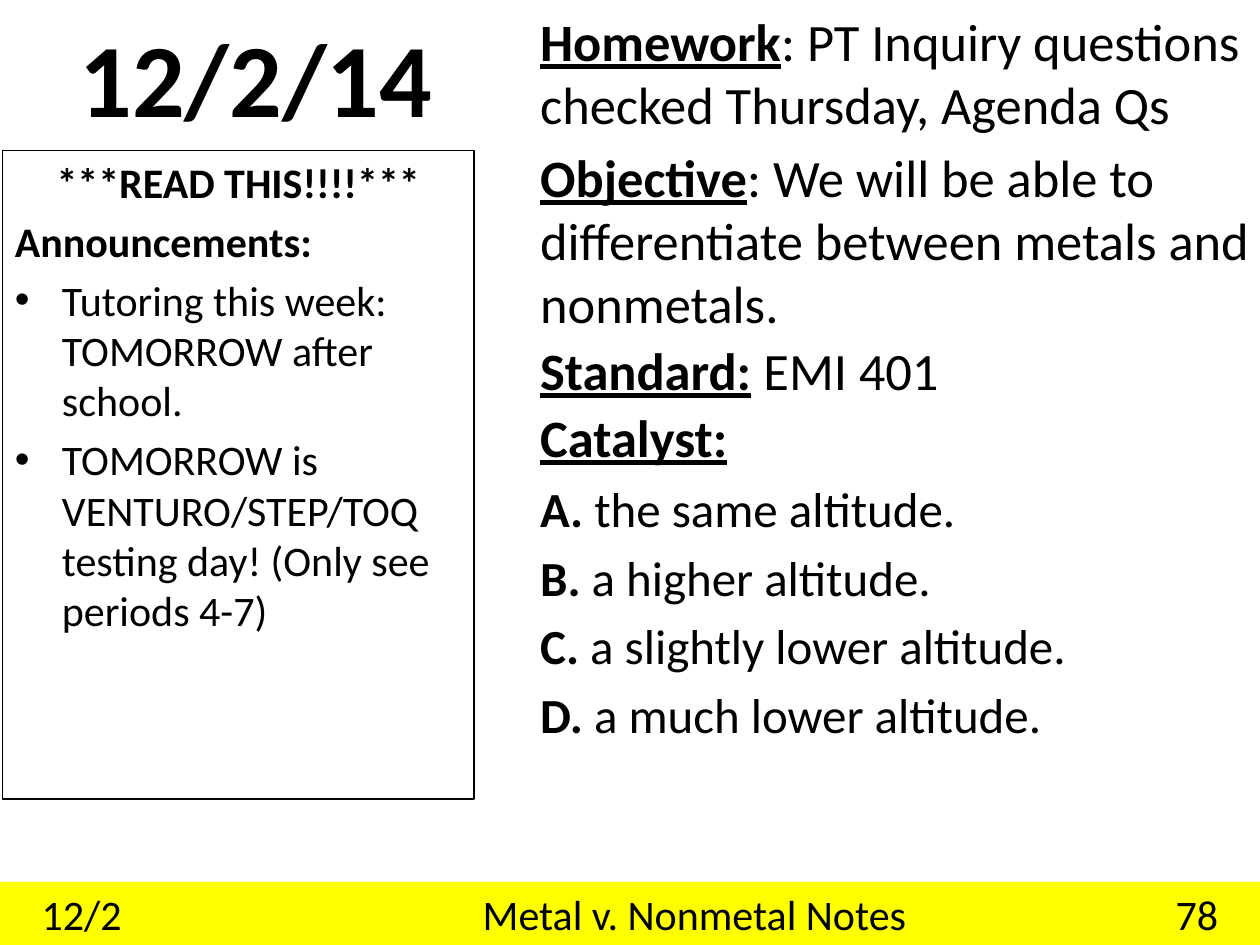
from dataclasses import dataclass

from lxml.etree import SubElement
from pptx import Presentation
from pptx.dml.color import RGBColor
from pptx.enum.shapes import MSO_SHAPE
from pptx.enum.text import MSO_ANCHOR, PP_ALIGN
from pptx.oxml.ns import qn
from pptx.util import Cm, Pt

BLACK = RGBColor(0x00, 0x00, 0x00)
YELLOW = RGBColor(0xFF, 0xFF, 0x00)
FONT = "Calibri"
BULLET_INDENT = Cm(0.95)
SPACE_RATIO = 0.2  # space before a paragraph, as a share of its text size


@dataclass
class Line:
    """One paragraph: a bold lead followed by regular text."""
    lead: str = ""
    rest: str = ""
    size: float = 24
    underline: bool = False
    bullet: bool = False
    align: PP_ALIGN = PP_ALIGN.LEFT
    spacing: float = 1.0


DATE = [Line("12/2/14", size=59.4, align=PP_ALIGN.CENTER)]
ANNOUNCEMENTS = [
    Line("***READ THIS!!!!***", align=PP_ALIGN.CENTER),
    Line("Announcements:"),
    Line(rest="Tutoring this week: TOMORROW after school.", bullet=True),
    Line(rest="TOMORROW is VENTURO/STEP/TOQ testing day! (Only see periods 4-7)",
         bullet=True),
]
AGENDA = [
    Line("Homework", ": PT Inquiry questions checked Thursday, Agenda Qs", 30, True),
    Line("Objective", ": We will be able to differentiate between metals and nonmetals.",
         30, True),
    Line("Standard:", " EMI 401", 30, True, spacing=0.9),
    Line("Catalyst:", "", 30, True, spacing=0.9),
    Line("A. ", "the same altitude.", 28),
    Line("B. ", "a higher altitude.", 28),
    Line("C. ", "a slightly lower altitude.", 28),
    Line("D. ", "a much lower altitude.", 28),
]


def add_bullet(para) -> None:
    properties = para._p.get_or_add_pPr()
    properties.set("marL", str(BULLET_INDENT))
    properties.set("indent", str(-BULLET_INDENT))
    SubElement(properties, qn("a:buFont")).set("typeface", "Arial")
    SubElement(properties, qn("a:buChar")).set("char", "•")


def add_tabs(para, stops) -> None:
    tab_list = SubElement(para._p.get_or_add_pPr(), qn("a:tabLst"))
    for position, align in stops:
        tab = SubElement(tab_list, qn("a:tab"))
        tab.set("pos", str(position))
        tab.set("algn", align)


def style_font(font, size: float, bold: bool = False, underline: bool = False) -> None:
    font.name = FONT
    font.size = Pt(size)
    font.bold = bold
    font.underline = underline
    font.color.rgb = BLACK


def add_lines(page, place, lines: list[Line], anchor=MSO_ANCHOR.TOP):
    box = page.shapes.add_textbox(*(Cm(length) for length in place))
    frame = box.text_frame
    frame.word_wrap = True
    frame.vertical_anchor = anchor
    for index, line in enumerate(lines):
        para = frame.add_paragraph() if index else frame.paragraphs[0]
        para.alignment = line.align
        para.line_spacing = line.spacing
        if index:
            para.space_before = Pt(line.size * SPACE_RATIO)
        if line.bullet:
            add_bullet(para)
        for text, is_lead in ((line.lead, True), (line.rest, False)):
            if text:
                span = para.add_run()
                span.text = text
                style_font(span.font, line.size, is_lead, is_lead and line.underline)
    return box


def add_footer(page) -> None:
    bar = page.shapes.add_shape(MSO_SHAPE.RECTANGLE, Cm(0), Cm(17.78), Cm(25.4), Cm(1.27))
    bar.shadow.inherit = False
    bar.fill.solid()
    bar.fill.fore_color.rgb = YELLOW
    bar.line.fill.background()
    frame = bar.text_frame
    frame.word_wrap = True
    frame.vertical_anchor = MSO_ANCHOR.MIDDLE
    frame.margin_left = Cm(0.84)
    frame.text = "12/2\tMetal v. Nonmetal Notes\t78"
    para = frame.paragraphs[0]
    para.alignment = PP_ALIGN.LEFT
    add_tabs(para, [(Cm(8.89), "l"), (Cm(23.72), "r")])
    for span in para.runs:
        style_font(span.font, 24)


def main() -> None:
    deck = Presentation()
    deck.slide_width, deck.slide_height = Cm(25.4), Cm(19.05)
    page = deck.slides.add_slide(deck.slide_layouts[6])

    # Date heading
    add_lines(page, (-1.19, 0.05, 12.7, 2.97), DATE, MSO_ANCHOR.MIDDLE)

    # Framed announcements
    board = add_lines(page, (0.05, 3.03, 9.51, 13.08), ANNOUNCEMENTS)
    board.line.color.rgb = BLACK
    board.line.width = Pt(0.75)

    # Agenda and catalyst answers
    add_lines(page, (10.64, 0.05, 15.37, 16.87), AGENDA)

    # Notebook footer
    add_footer(page)

    deck.save("out.pptx")


if __name__ == "__main__":
    main()
